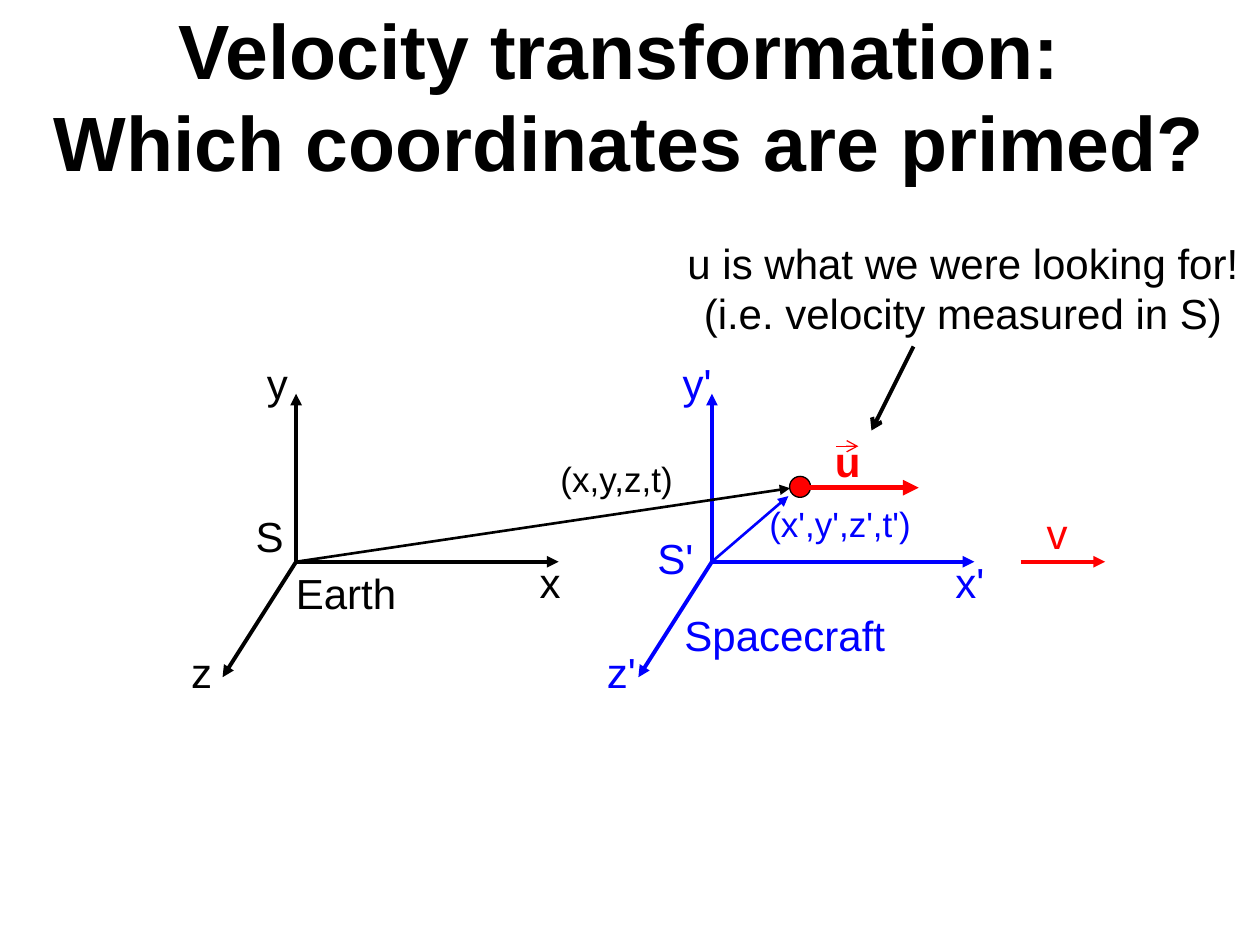
"""Build the velocity transformation slide with its two reference frames."""
from lxml.etree import SubElement
from pptx import Presentation
from pptx.dml.color import RGBColor
from pptx.enum.shapes import MSO_CONNECTOR as Connector, MSO_SHAPE as Shape
from pptx.enum.text import MSO_ANCHOR as Anchor, MSO_AUTO_SIZE as AutoSize, PP_ALIGN as Align
from pptx.oxml.ns import qn
from pptx.util import Pt

BLACK = RGBColor(0x00, 0x00, 0x00)
BLUE = RGBColor(0x00, 0x00, 0xFF)
RED = RGBColor(0xFF, 0x00, 0x00)

presentation = Presentation()
presentation.slide_width, presentation.slide_height = Pt(720), Pt(540)
slide = presentation.slides.add_slide(presentation.slide_layouts[6])


def add_arrow(start, end, color, width=2.25, head="triangle"):
    connector = slide.shapes.add_connector(
        Connector.STRAIGHT, *(Pt(value) for value in (*start, *end)))
    connector.line.color.rgb = color
    connector.line.width = Pt(width)
    properties = connector._element.spPr
    SubElement(properties.find(qn("a:ln")), qn("a:tailEnd"), type=head)
    SubElement(properties, qn("a:effectLst"))


def add_text(text, left, top, width, height, color, size=24, bold=False,
             align=Align.LEFT, **frame_format):
    text_box = slide.shapes.add_textbox(Pt(left), Pt(top), Pt(width), Pt(height))
    frame = text_box.text_frame
    frame.text = text
    settings = {"word_wrap": False, "auto_size": AutoSize.SHAPE_TO_FIT_TEXT, **frame_format}
    for name, value in settings.items():
        setattr(frame, name, value)
    font_format = {"name": "Arial", "size": Pt(size), "bold": bold}
    for paragraph in frame.paragraphs:
        paragraph.alignment = align
        for run in paragraph.runs:
            run.font.color.rgb = color
            for name, value in font_format.items():
                setattr(run.font, name, value)


add_text("Velocity transformation: \vWhich coordinates are primed?", 0, 0, 720, 108, BLACK,
         size=44, bold=True, align=Align.CENTER, word_wrap=True,
         auto_size=AutoSize.NONE, vertical_anchor=Anchor.MIDDLE)

ORIGIN_Y = 321
AXES = [
    ("x", 150, 0, 132, -6.3),
    ("z", -42, 66, -67, 45),
    ("y", 0, -96, -23.8, -120),
]
FRAMES = [(169.2, BLACK, "", 26.5), (406.8, BLUE, "'", 31)]
for origin_x, color, prime, label_width in FRAMES:
    for axis, reach_x, reach_y, label_x, label_y in AXES:
        add_arrow((origin_x, ORIGIN_Y), (origin_x + reach_x, ORIGIN_Y + reach_y), color)
        add_text(axis + prime, origin_x + label_x, ORIGIN_Y + label_y, label_width, 36, color)

LABELS = [
    ("S", 139, 288, 33, 36.5, BLACK, 24),
    ("S'", 368.6, 301, 38, 41, BLUE, 24),
    ("Earth", 162, 321, 73, 36.5, BLACK, 24),
    ("Spacecraft", 384, 345, 135, 36.5, BLUE, 24),
    ("v", 591, 286.5, 29, 41, RED, 24),
    ("(x,y,z,t)", 313.2, 258, 80, 31, BLACK, 20),
    ("(x',y',z',t')", 432.5, 283.5, 98, 31, BLUE, 20),
]
for label in LABELS:
    add_text(*label)

add_arrow((169.2, ORIGIN_Y), (451.5, 279), BLACK, width=1.5)
add_arrow((408, 320), (450.5, 283.5), BLUE, width=1.5)
add_arrow((583.2, ORIGIN_Y), (631.5, ORIGIN_Y), RED)

particle = slide.shapes.add_shape(Shape.OVAL, Pt(451.2), Pt(272.2), Pt(12), Pt(12))
particle.shadow.inherit = False
particle.fill.solid()
particle.fill.fore_color.rgb = RED
particle.line.color.rgb = BLACK
particle.line.width = Pt(0.75)

add_arrow((459, 278.7), (525, 278.7), RED, width=3)
add_text("u", 470, 245.5, 28, 36, RED, bold=True)
add_arrow((478, 255), (490.5, 255), RED, width=0.75, head="arrow")

add_arrow((522, 198), (498, 246), BLACK, head="arrow")
add_text("u is what we were looking for!\n(i.e. velocity measured in S)",
         384, 132, 332.5, 65.5, BLACK, align=Align.CENTER)

presentation.save("out.pptx")
